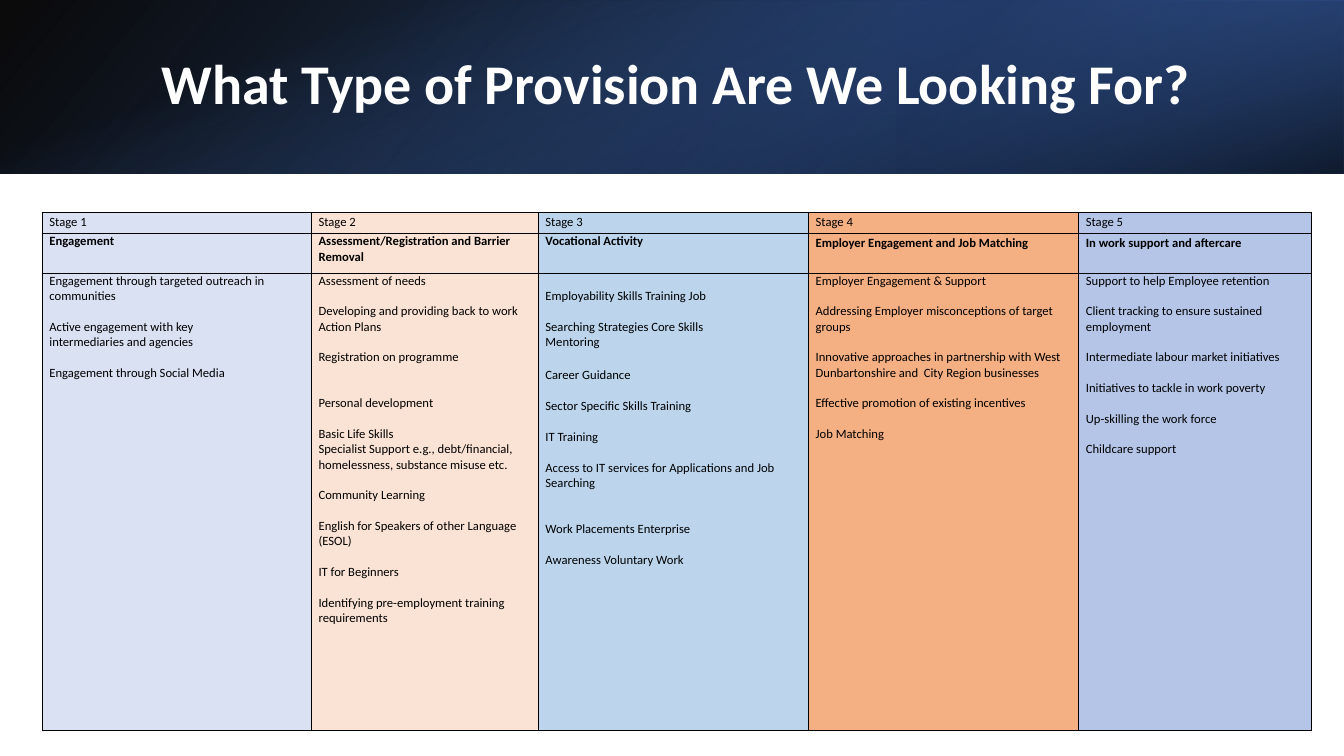
from pptx import Presentation
from pptx.dml.color import RGBColor
from pptx.enum.shapes import MSO_SHAPE
from pptx.enum.text import MSO_ANCHOR, PP_ALIGN
from pptx.oxml import parse_xml
from pptx.oxml.ns import nsdecls, qn
from pptx.util import Inches, Pt

RECT = MSO_SHAPE.RECTANGLE
MIDDLE = MSO_ANCHOR.MIDDLE
LEFT = PP_ALIGN.LEFT

COLORS = {
    "black": "000000", "white": "FFFFFF", "navy": "203864",
    "royal": "2F5597", "blue": "4472C4", "lavender": "D9E1F3",
    "peach": "FAE3D4", "sky": "BCD5ED", "orange": "F4AF83",
    "periwinkle": "B4C5E7",
}

NARROW = {"right": 0.9}
DOUBLE = {"right": 0.9, "spacing": 2.0}

STAGES = [
    ("Engagement", 1.0, "lavender", 2.67, [
        ("Engagement through targeted outreach in communities", {}),
        ("Active engagement with key intermediaries and agencies", NARROW),
        ("Engagement through Social Media", {}),
    ]),
    ("Assessment/Registration and Barrier Removal", 1.0, "peach", 2.25, [
        ("Assessment of needs", {}),
        ("Developing and providing back to work Action Plans", {}),
        ("Registration on programme", {}),
        ("Personal development Basic Life Skills", DOUBLE),
        ("Specialist Support e.g., debt/financial, homelessness, "
         "substance misuse etc.", {"before": 0}),
        ("Community Learning", {}),
        ("English for Speakers of other Language (ESOL)", {}),
        ("IT for Beginners", {}),
        ("Identifying pre-employment training requirements", {}),
    ]),
    ("Vocational Activity", 1.0, "sky", 2.68, [
        ("Employability Skills Training Job Searching Strategies Core Skills",
         DOUBLE),
        ("Mentoring", {"before": 0}),
        ("Career Guidance", {"before": 13}),
        ("Sector Specific Skills Training", {}),
        ("IT Training", {}),
        ("Access to IT services for Applications and Job Searching", {}),
        ("Work Placements Enterprise Awareness Voluntary Work", DOUBLE),
    ]),
    ("Employer Engagement and Job Matching", Pt(12), "orange", 2.68, [
        ("Employer Engagement & Support", {}),
        ("Addressing Employer misconceptions of target groups", {}),
        ("Innovative approaches in partnership with West Dunbartonshire "
         "and  City Region businesses", {}),
        ("Effective promotion of existing incentives", {}),
        ("Job Matching", {}),
    ]),
    ("In work support and aftercare", Pt(12), "periwinkle", 2.31, [
        ("Support to help Employee retention", {}),
        ("Client tracking to ensure sustained employment", {}),
        ("Intermediate labour market initiatives", {}),
        ("Initiatives to tackle in work poverty", {}),
        ("Up-skilling the work force", {}),
        ("Childcare support", {}),
    ]),
]
ROW_HEIGHTS = [0.21, 0.39, 4.54]


class SlideBuilder:
    """Holds the style and the current slide, and adds its elements."""

    font = "Calibri"

    def __init__(self, prs):
        self.s = prs.slides.add_slide(prs.slide_layouts[5])

    def color(self, name):
        return RGBColor.from_string(COLORS[name])

    def style(self, p, size, color, bold=False):
        for r in p.runs:
            r.font.name = self.font
            r.font.size = Pt(size)
            r.font.bold = bold
            r.font.color.rgb = self.color(color)

    def band(self, box, stops, angle, rotation=0, flip=False):
        sp = self.s.shapes.add_shape(RECT, *map(Inches, box))
        sp.shadow.inherit = False
        sp.rotation = rotation
        if flip:
            sp.element.spPr.find(qn("a:xfrm")).set("flipH", "1")
        sp.line.fill.background()
        sp.fill.gradient()
        sp.fill.gradient_angle = 360 - angle
        for stop, (position, name, _) in zip(sp.fill.gradient_stops, stops):
            stop.position = position / 100
            stop.color.rgb = self.color(name)
        tints = sp.element.spPr.iter(qn("a:srgbClr"))
        for tint, (_, _, opacity) in zip(list(tints), stops):
            tint.append(parse_xml(
                f'<a:alpha {nsdecls("a")} val="{opacity * 1000}"/>'))

    def title(self, box, text):
        sp = self.s.shapes.title
        sp.left, sp.top, sp.width, sp.height = map(Inches, box)
        sp.element.getparent().append(sp.element)
        tf = sp.text_frame
        tf.text = text
        tf.vertical_anchor = MIDDLE
        p = tf.paragraphs[0]
        p.alignment = LEFT
        p.line_spacing = 0.9
        self.style(p, 40, "white", True)

    def table(self, left, top, widths, heights):
        frame = self.s.shapes.add_table(
            len(heights), len(widths), Inches(left), Inches(top),
            Inches(sum(widths)), Inches(sum(heights)))
        table = frame.table
        table.first_row = table.horz_banding = False
        for column, width in zip(table.columns, widths):
            column.width = Inches(width)
        for row, height in zip(table.rows, heights):
            row.height = Inches(height)
        return table

    def cell(self, cell, fill, items, bold=False):
        cell.margin_left = cell.margin_right = 0
        cell.margin_top = cell.margin_bottom = 0
        tc_pr = cell._tc.get_or_add_tcPr()
        for side in "LRTB":
            tc_pr.append(parse_xml(
                f'<a:ln{side} {nsdecls("a")} w="12700"><a:solidFill>'
                f'<a:srgbClr val="{COLORS["black"]}"/></a:solidFill>'
                f'</a:ln{side}>'))
        cell.fill.solid()
        cell.fill.fore_color.rgb = self.color(fill)
        tf = cell.text_frame
        for i, (text, layout) in enumerate(items):
            p = tf.add_paragraph() if i else tf.paragraphs[0]
            p.text = text
            p.line_spacing = layout.get("spacing", 1.0)
            p.space_before = Pt(layout.get("before", 11) if i else 0)
            p_pr = p._p.get_or_add_pPr()
            p_pr.set("marL", str(Inches(0.07)))
            p_pr.set("marR", str(Inches(layout.get("right", 0))))
            self.style(p, 9, "black", bold)


def main():
    prs = Presentation()
    prs.slide_width, prs.slide_height = Inches(13.33), Inches(7.5)
    slide = SlideBuilder(prs)
    slide.band((0, 0, 13.33, 1.72),
               [(0, "black", 96), (100, "royal", 100)], 140, flip=True)
    slide.band((8.89, 0, 4.44, 1.72),
               [(19, "navy", 68), (100, "blue", 79)], 320, 180, True)
    slide.band((5.8, -5.8, 1.72, 13.33),
               [(23, "blue", 0), (99, "black", 74)], 340, 90)
    slide.title((1.5, 0.38, 10.98, 0.96),
                "What Type of Provision Are We Looking For?")
    table = slide.table(0.42, 2.11, [stage[3] for stage in STAGES],
                        ROW_HEIGHTS)
    for col, (heading, spacing, fill, _, items) in enumerate(STAGES):
        slide.cell(table.cell(0, col), fill,
                   [(f"Stage {col + 1}", {"spacing": Pt(12.4)})])
        slide.cell(table.cell(1, col), fill,
                   [(heading, {"spacing": spacing})], True)
        slide.cell(table.cell(2, col), fill, items)
    prs.save("out.pptx")


if __name__ == "__main__":
    main()
